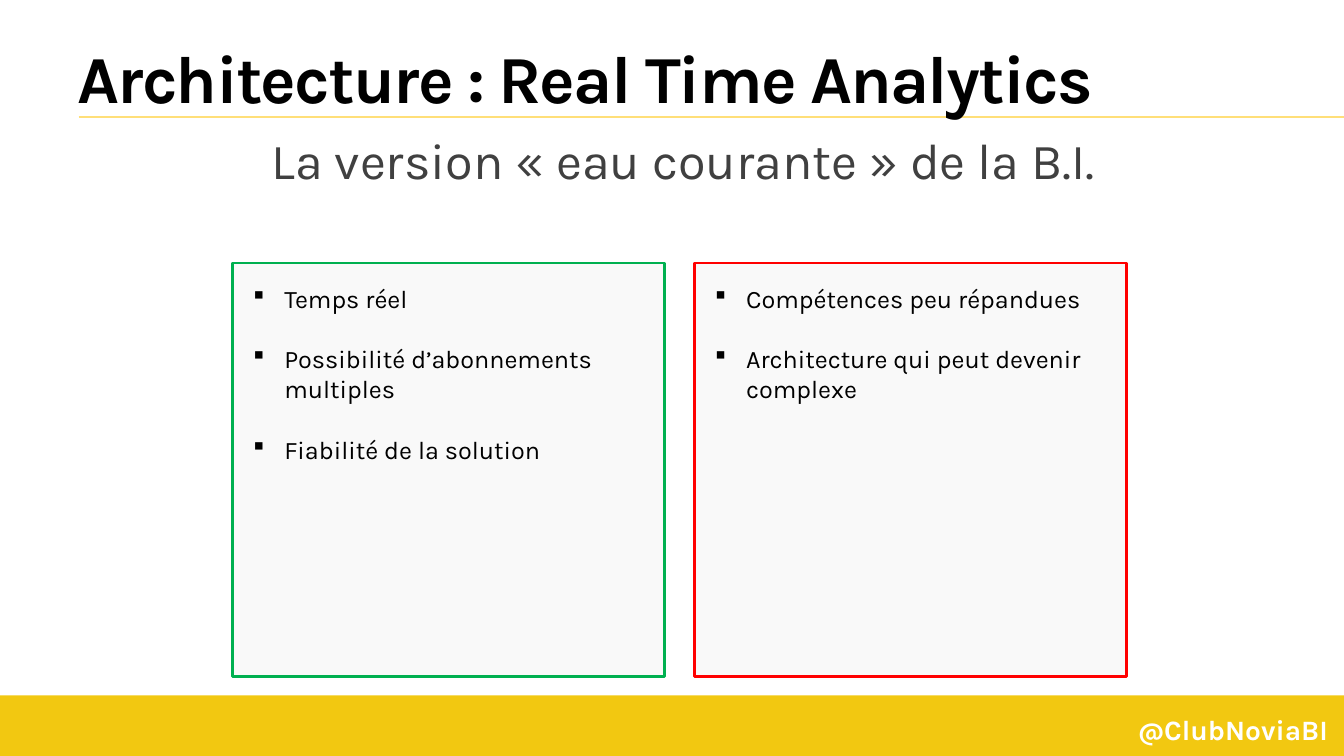
from lxml import etree
from pptx import Presentation
from pptx.dml.color import RGBColor
from pptx.enum import shapes, text
from pptx.oxml import ns
from pptx.util import Inches, Pt

FONT = "Karla"
BLACK = RGBColor(0x00, 0x00, 0x00)
WHITE = RGBColor(0xFF, 0xFF, 0xFF)
GRAY = RGBColor(0x40, 0x40, 0x40)
PANEL = RGBColor(0xF9, 0xF9, 0xF9)
YELLOW = RGBColor(0xF2, 0xC8, 0x11)
PALE_YELLOW = RGBColor(0xFF, 0xDF, 0x79)
GREEN = RGBColor(0x00, 0xB0, 0x50)
RED = RGBColor(0xFF, 0x00, 0x00)

PANELS = [
    (GREEN, ["Temps réel", "Possibilité d’abonnements multiples",
             "Fiabilité de la solution"]),
    (RED, ["Compétences peu répandues",
           "Architecture qui peut devenir complexe"]),
]


def style(font, size, color, bold=False):
    font.name = FONT
    font.size = Pt(size)
    font.bold = bold
    font.color.rgb = color


def add_rect(s, x, y, w, h, fill, line=None):
    sp = s.shapes.add_shape(shapes.MSO_SHAPE.RECTANGLE,
                            Inches(x), Inches(y), Inches(w), Inches(h))
    sp.shadow.inherit = False
    sp.fill.solid()
    sp.fill.fore_color.rgb = fill
    if line is None:
        sp.line.fill.background()
    else:
        sp.line.color.rgb = line
        sp.line.width = Pt(2)
    return sp


def add_rule(s, x1, x2, y):
    line = s.shapes.add_connector(shapes.MSO_CONNECTOR.STRAIGHT,
                                  Inches(x1), Inches(y), Inches(x2), Inches(y))
    line.line.color.rgb = PALE_YELLOW
    line.line.width = Pt(1.5)
    etree.SubElement(line._element.spPr, ns.qn("a:effectLst"))


def add_text(s, x, y, w, h, words, size, color, bold=False):
    sp = s.shapes.add_textbox(Inches(x), Inches(y), Inches(w), Inches(h))
    tf = sp.text_frame
    tf.word_wrap = True
    tf.text = words
    style(tf.paragraphs[0].runs[0].font, size, color, bold)
    return tf


def add_bullet(p):
    """Hang a small square; § is the square in Wingdings."""
    pPr = p._p.get_or_add_pPr()
    pPr.set("marL", str(Inches(0.31)))
    pPr.set("indent", str(-Inches(0.31)))
    etree.SubElement(pPr, ns.qn("a:buFont")).set("typeface", "Wingdings")
    etree.SubElement(pPr, ns.qn("a:buChar")).set("char", "§")


def add_panel(s, x, color, items):
    tf = add_rect(s, x, 2.61, 4.28, 4.1, PANEL, color).text_frame
    tf.word_wrap = True
    tf.vertical_anchor = text.MSO_ANCHOR.TOP
    tf.margin_left = tf.margin_right = Inches(0.2)
    tf.margin_top = tf.margin_bottom = Inches(0.2)
    for i, item in enumerate(items):
        p = tf.add_paragraph() if i else tf.paragraphs[0]
        p.text = item
        p.alignment = text.PP_ALIGN.LEFT
        if i:
            p.space_before = Pt(21.5)
        add_bullet(p)
        style(p.runs[0].font, 18, BLACK)


def add_footer(s):
    add_rect(s, 0, 6.9, 13.33, 0.6, YELLOW)
    tf = add_text(s, 11.19, 7.02, 2.14, 0.44, "@", 18, WHITE, True)
    tf.word_wrap = False
    r = tf.paragraphs[0].add_run()
    r.text = "ClubNoviaBI"
    style(r.font, 20, WHITE, True)


def add_title(s):
    tf = add_text(s, 0.67, 0.3, 12, 0.93,
                  "Architecture : Real Time Analytics", 48, BLACK, True)
    tf.vertical_anchor = text.MSO_ANCHOR.MIDDLE
    tf.paragraphs[0].runs[0].font._element.set("spc", "-130")


def add_subtitle(s):
    tf = add_text(s, 0.67, 1.23, 12.22, 5.69,
                  "La version « eau courante » de la B.I.", 36, GRAY)
    tf.paragraphs[0].alignment = text.PP_ALIGN.CENTER


def main():
    prs = Presentation()
    prs.slide_width = Inches(13.33)
    prs.slide_height = Inches(7.5)
    s = prs.slides.add_slide(prs.slide_layouts[6])
    add_footer(s)
    add_rule(s, 0.78, 13.33, 1.16)
    for i, (color, items) in enumerate(PANELS):
        add_panel(s, 2.31 + i * 4.58, color, items)
    add_title(s)
    add_subtitle(s)
    prs.save("out.pptx")


if __name__ == "__main__":
    main()
